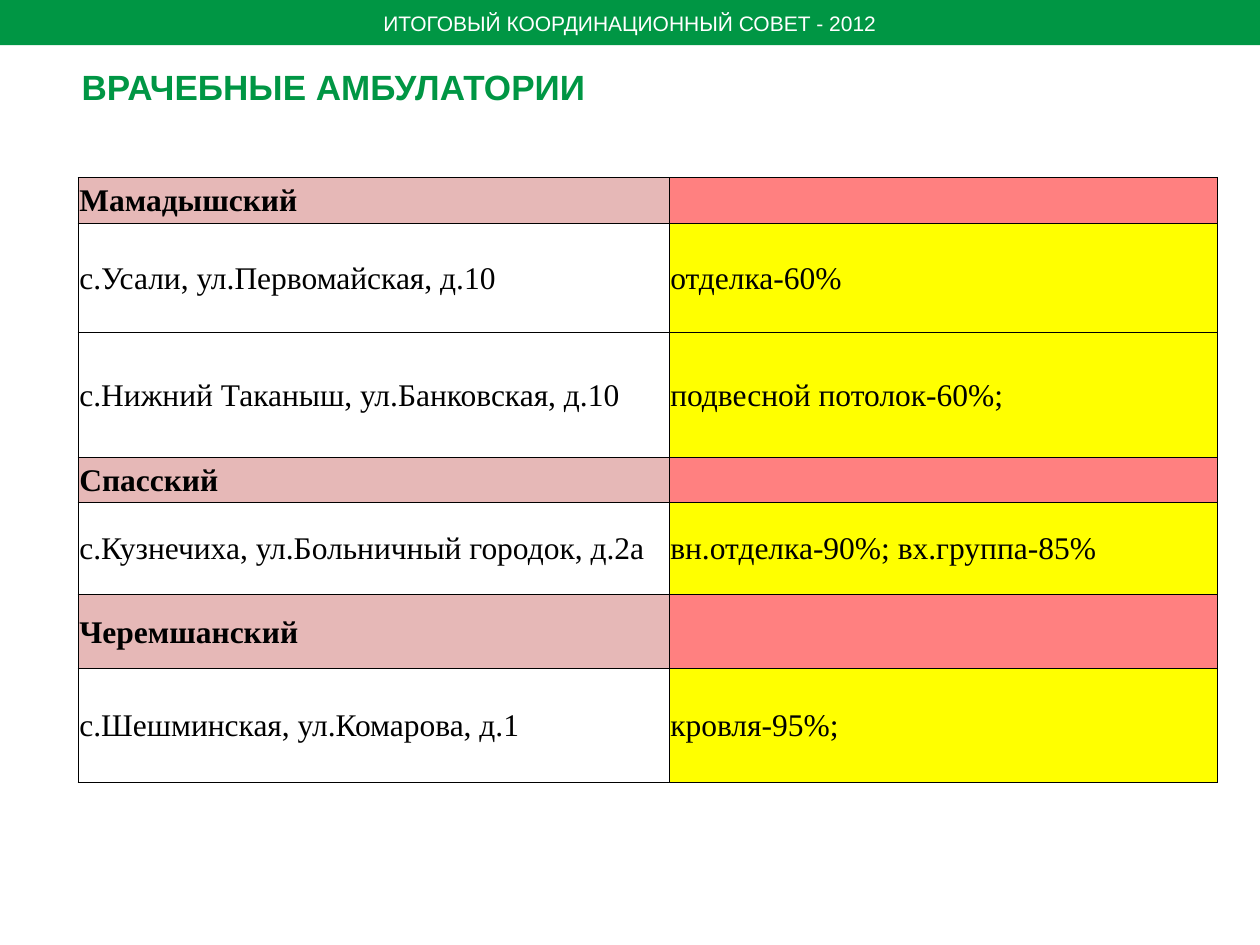
from lxml import etree
from pptx import Presentation
from pptx.dml.color import RGBColor
from pptx.enum import shapes, text
from pptx.oxml import ns
from pptx.util import Inches, Pt

HUES = {
    "green": "009644",
    "white": "FFFFFF",
    "black": "000000",
    "rose": "E6B8B7",
    "coral": "FF8080",
    "yellow": "FFFF00",
}

ROWS = [
    (0.36, "Мамадышский", ""),
    (0.87, "с.Усали, ул.Первомайская, д.10", "отделка-60%"),
    (0.99, "с.Нижний Таканыш, ул.Банковская, д.10", "подвесной потолок-60%;"),
    (0.36, "Спасский", ""),
    (0.73, "с.Кузнечиха, ул.Больничный городок, д.2а", "вн.отделка-90%; вх.группа-85%"),
    (0.59, "Черемшанский", ""),
    (0.9, "с.Шешминская, ул.Комарова, д.1", "кровля-95%;"),
]


def tint(name):
    return RGBColor.from_string(HUES[name])


def write(frame, words, size=18, font="Arial", hue="black", bold=False, align="LEFT"):
    para = frame.paragraphs[0]
    para.alignment = getattr(text.PP_ALIGN, align)
    if not words:
        return
    run = para.add_run()
    run.text = words
    run.font.size = Pt(size)
    run.font.name = font
    run.font.bold = bold
    run.font.color.rgb = tint(hue)


class Deck:
    def __init__(self):
        self.file = Presentation()
        self.file.slide_width = Inches(10)
        self.file.slide_height = Inches(7.5)
        self.slide = self.file.slides.add_slide(self.file.slide_layouts[6])

    def band(self, box, words, fill, **style):
        shape = self.slide.shapes.add_shape(
            shapes.MSO_SHAPE.RECTANGLE, *map(Inches, box))
        shape.shadow.inherit = False
        shape.fill.solid()
        shape.fill.fore_color.rgb = tint(fill)
        shape.line.fill.background()
        shape.text_frame.word_wrap = False
        shape.text_frame.vertical_anchor = text.MSO_ANCHOR.MIDDLE
        write(shape.text_frame, words, **style)

    def title(self, box, words, **style):
        frame = self.slide.shapes.add_textbox(*map(Inches, box)).text_frame
        frame.word_wrap = True
        write(frame, words, **style)

    def border(self, cell, hue="black", width=0.5):
        props = cell._tc.get_or_add_tcPr()
        for spot, side in enumerate(("lnL", "lnR", "lnT", "lnB")):
            line = etree.Element(ns.qn(f"a:{side}"), w=str(Pt(width)))
            fill = etree.SubElement(line, ns.qn("a:solidFill"))
            etree.SubElement(fill, ns.qn("a:srgbClr"), val=HUES[hue])
            props.insert(spot, line)

    def cell(self, cell, words, fill, **style):
        cell.margin_left = cell.margin_right = cell.margin_top = Inches(0.01)
        cell.margin_bottom = 0
        cell.vertical_anchor = text.MSO_ANCHOR.MIDDLE
        if fill:
            cell.fill.solid()
            cell.fill.fore_color.rgb = tint(fill)
        else:
            cell.fill.background()
        self.border(cell)
        write(cell.text_frame, words, font="Times New Roman", **style)

    def table(self, left, top, widths, rows):
        high = sum(row[0] for row in rows)
        size = map(Inches, (left, top, sum(widths), high))
        grid = self.slide.shapes.add_table(len(rows), len(widths), *size).table
        for col, width in zip(grid.columns, widths):
            col.width = Inches(width)
        for num, (height, place, state) in enumerate(rows):
            grid.rows[num].height = Inches(height)
            head = not state
            fills = ("rose", "coral") if head else (None, "yellow")
            for col, (words, fill) in enumerate(zip((place, state), fills)):
                align = "LEFT" if state.startswith("подвесной") and col else "JUSTIFY"
                self.cell(grid.cell(num, col), words, fill, bold=head, align=align)


def main():
    deck = Deck()
    deck.band((0, 0, 10, 0.36), "ИТОГОВЫЙ КООРДИНАЦИОННЫЙ СОВЕТ - 2012", "green",
              size=12, hue="white", align="CENTER")
    deck.table(0.62, 1.41, (4.69, 4.35), ROWS)
    deck.title((0.55, 0.47, 9.01, 1.16), "ВРАЧЕБНЫЕ АМБУЛАТОРИИ",
               size=20, hue="green", bold=True)
    deck.file.save("out.pptx")


if __name__ == "__main__":
    main()
